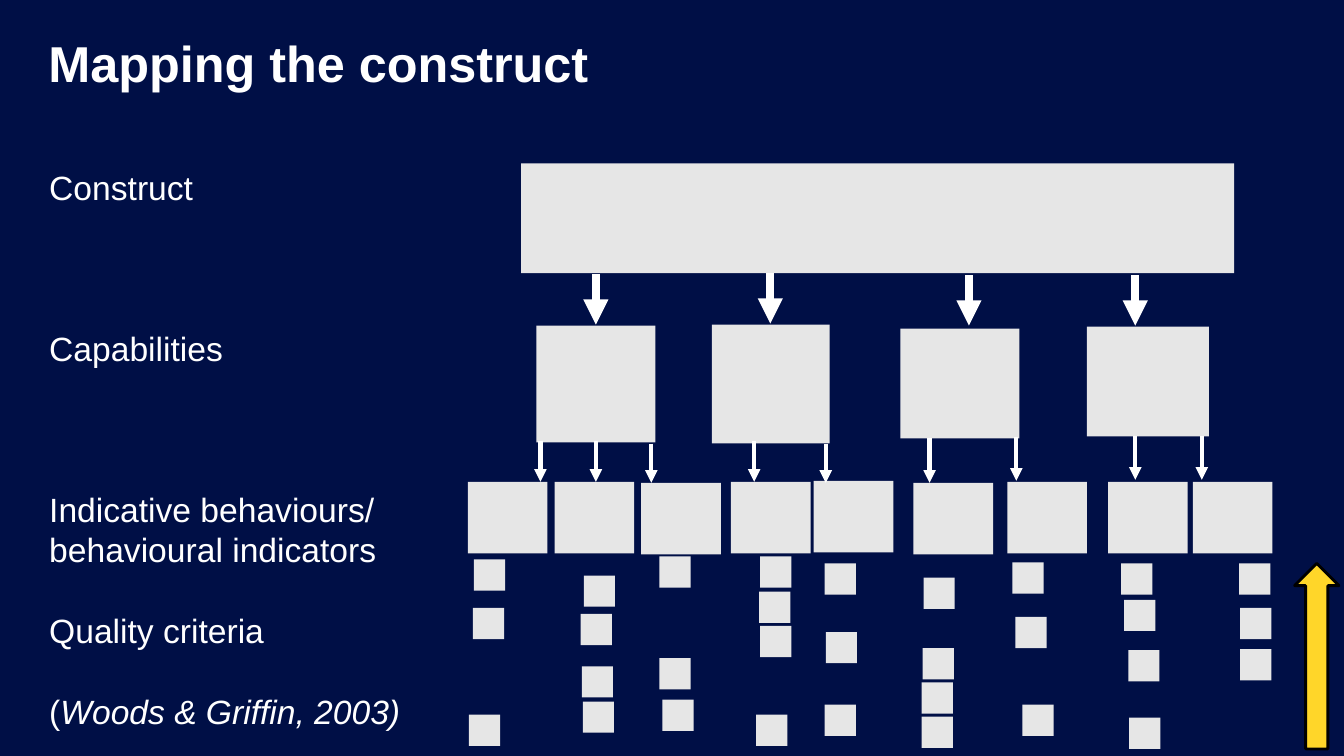
"""Build the slide that maps a construct down to its quality criteria."""
from dataclasses import dataclass
from lxml.etree import SubElement
from pptx import Presentation
from pptx.dml.color import RGBColor
from pptx.enum.shapes import MSO_CONNECTOR, MSO_SHAPE
from pptx.oxml.ns import qn
from pptx.util import Cm, Pt


@dataclass(frozen=True)
class Theme:
    back: str = "000F46"
    text: str = "FFFFFF"
    box: str = "E6E6E6"
    gold: str = "FFD629"
    edge: str = "000000"
    font: str = "Arial"
    title: float = 36
    lead: float = 40
    body: float = 24
    pitch: float = 28.8
    thick: float = 6
    thin: float = 3
    rim: float = 2


THEME = Theme()
SCALE = 2.54

TITLE = [(0, [("Mapping the construct", False)])]
LABELS = [
    (0, [("Construct", False)]),
    (3, [("Capabilities", False)]),
    (3, [("Indicative behaviours/", False)]),
    (0, [("behavioural indicators", False)]),
    (1, [("Quality criteria", False)]),
    (1, [("(", False), ("Woods & Griffin, 2003)", True)]),
]
CONSTRUCT = (5.17, 1.62, 7.07, 1.09)
SKILLS = [
    (5.32, 3.23, 1.18, 1.16), (7.06, 3.22, 1.17, 1.18),
    (8.93, 3.26, 1.18, 1.09), (10.78, 3.24, 1.21, 1.09),
]
DROPS = [(5.91, 2.72), (7.64, 2.71), (9.61, 2.73), (11.26, 2.73)]
DROP = 0.5
LINKS = [
    (5.36, 4.38, 4.78), (5.91, 4.38, 4.78), (6.46, 4.4, 4.79),
    (7.48, 4.38, 4.78), (8.19, 4.4, 4.79), (9.22, 4.35, 4.79),
    (10.08, 4.34, 4.77), (11.26, 4.33, 4.76), (11.92, 4.33, 4.76),
]
SIGNS = [
    (4.64, 4.78), (5.5, 4.78), (6.36, 4.79), (7.25, 4.78), (8.07, 4.77),
    (9.06, 4.79), (9.99, 4.78), (10.99, 4.78), (11.83, 4.78),
]
SIGN = (0.79, 0.71)
MARKS = [
    [(4.7, 5.55), (4.69, 6.03), (4.65, 7.09)],
    [(5.79, 5.71), (5.76, 6.09), (5.77, 6.61), (5.78, 6.96)],
    [(6.54, 5.52), (6.54, 6.53), (6.57, 6.94)],
    [(7.54, 5.52), (7.53, 5.87), (7.54, 6.21), (7.5, 7.09)],
    [(8.18, 5.59), (8.19, 6.27), (8.18, 6.99)],
    [(9.16, 5.73), (9.15, 6.43), (9.14, 6.77), (9.14, 7.11)],
    [(10.04, 5.58), (10.07, 6.12), (10.14, 6.99)],
    [(11.12, 5.59), (11.15, 5.95), (11.19, 6.45), (11.2, 7.12)],
    [(12.29, 5.59), (12.3, 6.03), (12.3, 6.44)],
]
MARK = (0.31, 0.31)
GROWTH = (12.84, 5.59, 0.44, 1.84)


def scale(*sizes):
    return [Cm(size * SCALE) for size in sizes]


def tint(name):
    return RGBColor.from_string(name)


def write(slide, place, lines, size, pitch, bold=False, pad=(0, 0)):
    frame = slide.shapes.add_textbox(*scale(*place)).text_frame
    frame.word_wrap = True
    frame.margin_left = frame.margin_right = Cm(pad[0])
    frame.margin_top = frame.margin_bottom = Cm(pad[1])
    for row, (gap, runs) in enumerate(lines):
        para = frame.add_paragraph() if row else frame.paragraphs[0]
        para.line_spacing = Pt(pitch)
        if gap:
            para.space_before = Pt(gap * pitch)
        for text, slant in runs:
            run = para.add_run()
            run.text = text
            font = run.font
            font.name, font.size = THEME.font, Pt(size)
            font.bold, font.italic = bold, slant
            font.color.rgb = tint(THEME.text)


def block(slide, place, kind=MSO_SHAPE.RECTANGLE, fill=THEME.box, edge=None):
    shape = slide.shapes.add_shape(kind, *scale(*place))
    shape.shadow.inherit = False
    shape.fill.solid()
    shape.fill.fore_color.rgb = tint(fill)
    if edge:
        shape.line.color.rgb = tint(edge)
        shape.line.width = Pt(THEME.rim)
    else:
        shape.line.fill.background()


def arrow(slide, left, top, end, width):
    line = slide.shapes.add_connector(
        MSO_CONNECTOR.STRAIGHT, *scale(left, top, left, end))
    line.line.color.rgb = tint(THEME.text)
    line.line.width = Pt(width)
    SubElement(line.line._get_or_add_ln(), qn("a:tailEnd"), type="triangle")
    SubElement(line._element.spPr, qn("a:effectLst"))


def main():
    deck = Presentation()
    deck.slide_width, deck.slide_height = scale(13.33, 7.5)
    slide = deck.slides.add_slide(deck.slide_layouts[6])
    slide.background.fill.solid()
    slide.background.fill.fore_color.rgb = tint(THEME.back)

    write(slide, (0.48, 0.36, 10.6, 0.58), TITLE, THEME.title, THEME.lead,
          bold=True)
    block(slide, CONSTRUCT)
    for left, top in DROPS:
        arrow(slide, left, top, top + DROP, THEME.thick)
    for place in SKILLS:
        block(slide, place)
    for spot in SIGNS:
        block(slide, spot + SIGN)
    for column in MARKS:
        for spot in column:
            block(slide, spot + MARK)
    for left, top, end in LINKS:
        arrow(slide, left, top, end, THEME.thin)
    write(slide, (0.39, 1.6, 3.74, 5.75), LABELS, THEME.body, THEME.pitch,
          pad=(0.25, 0.13))
    block(slide, GROWTH, MSO_SHAPE.UP_ARROW, THEME.gold, THEME.edge)
    deck.save("out.pptx")


if __name__ == "__main__":
    main()
